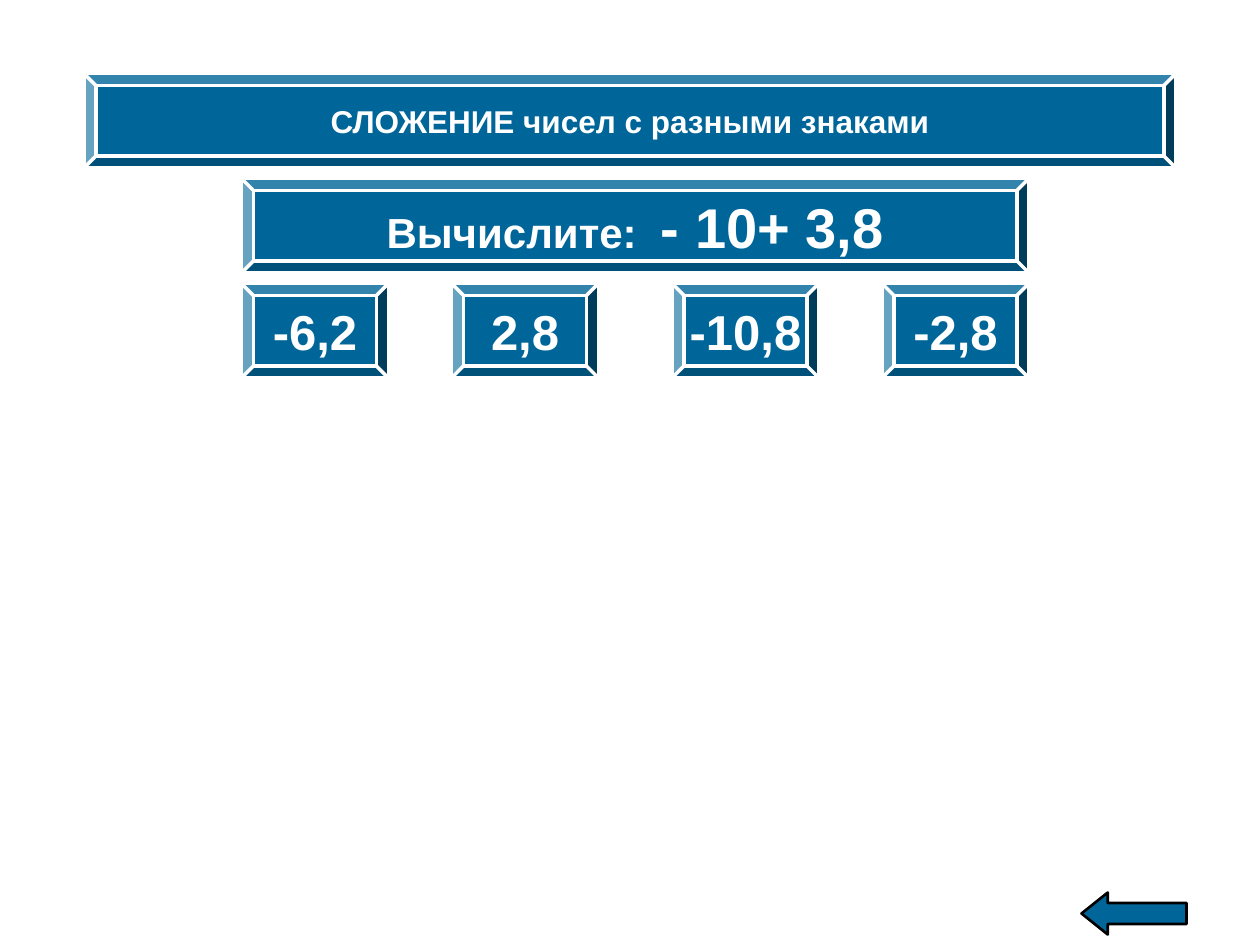
import pptx
import pptx.dml.color
import pptx.enum.shapes
import pptx.enum.text
import pptx.util

COLORS = {"panel": "006699", "edge": "FFFFFF", "text": "FFFFFF", "outline": "000000"}
SHAPES = pptx.enum.shapes.MSO_SHAPE
COLUMNS, ROWS = 120, 90
PANEL_ROWS, ROW_STEP, FIRST_ROW = 9, 10, 7


def color(name):
    return pptx.dml.color.RGBColor.from_string(COLORS[name])


def apply(target, values):
    for name, value in values.items():
        setattr(target, name, value)


class QuizSlide:
    def __init__(self, deck):
        self.page = deck.slides.add_slide(deck.slide_layouts[6])
        self.cell_width = deck.slide_width / COLUMNS
        self.cell_height = deck.slide_height / ROWS
        self.font = {"name": "Arial", "bold": True}
        self.frame = {
            "word_wrap": False,
            "vertical_anchor": pptx.enum.text.MSO_ANCHOR.MIDDLE,
        }

    def shape(self, kind, column, row, columns, rows, edge, weight, adjustments):
        box = self.page.shapes.add_shape(
            kind,
            round(column * self.cell_width),
            round(row * self.cell_height),
            round(columns * self.cell_width),
            round(rows * self.cell_height),
        )
        box.shadow.inherit = False
        box.fill.solid()
        box.fill.fore_color.rgb = color("panel")
        box.line.color.rgb = color(edge)
        box.line.width = pptx.util.Pt(weight)
        for index, value in enumerate(adjustments):
            box.adjustments[index] = value
        return box

    def panel(self, column, level, columns, spans):
        row = FIRST_ROW + level * ROW_STEP
        box = self.shape(SHAPES.BEVEL, column, row, columns, PANEL_ROWS, "edge", 2, [0.125])
        apply(box.text_frame, self.frame)
        para = box.text_frame.paragraphs[0]
        para.alignment = pptx.enum.text.PP_ALIGN.CENTER
        for text, size in spans:
            span = para.add_run()
            span.text = text
            apply(span.font, {**self.font, "size": pptx.util.Pt(size)})
            span.font.color.rgb = color("text")

    def back_arrow(self, column, row, columns, rows):
        self.shape(SHAPES.LEFT_ARROW, column, row, columns, rows, "outline", 1.5, [0.5, 0.625])


def main():
    deck = pptx.Presentation()
    deck.slide_width = pptx.util.Inches(10)
    deck.slide_height = pptx.util.Inches(7.5)
    quiz = QuizSlide(deck)
    quiz.back_arrow(103, 85, 10, 4)
    quiz.panel(8, 0, 104, [("СЛОЖЕНИЕ чисел с разными знаками", 18)])
    quiz.panel(23, 1, 75, [("Вычислите:", 24), (" ", 18), (" - 10+ 3,8", 32)])
    answers = {23: "-6,2", 43: "2,8", 64: "-10,8", 84: "-2,8"}
    for column, answer in answers.items():
        quiz.panel(column, 2, 14, [(answer, 28)])
    deck.save("out.pptx")


if __name__ == "__main__":
    main()
